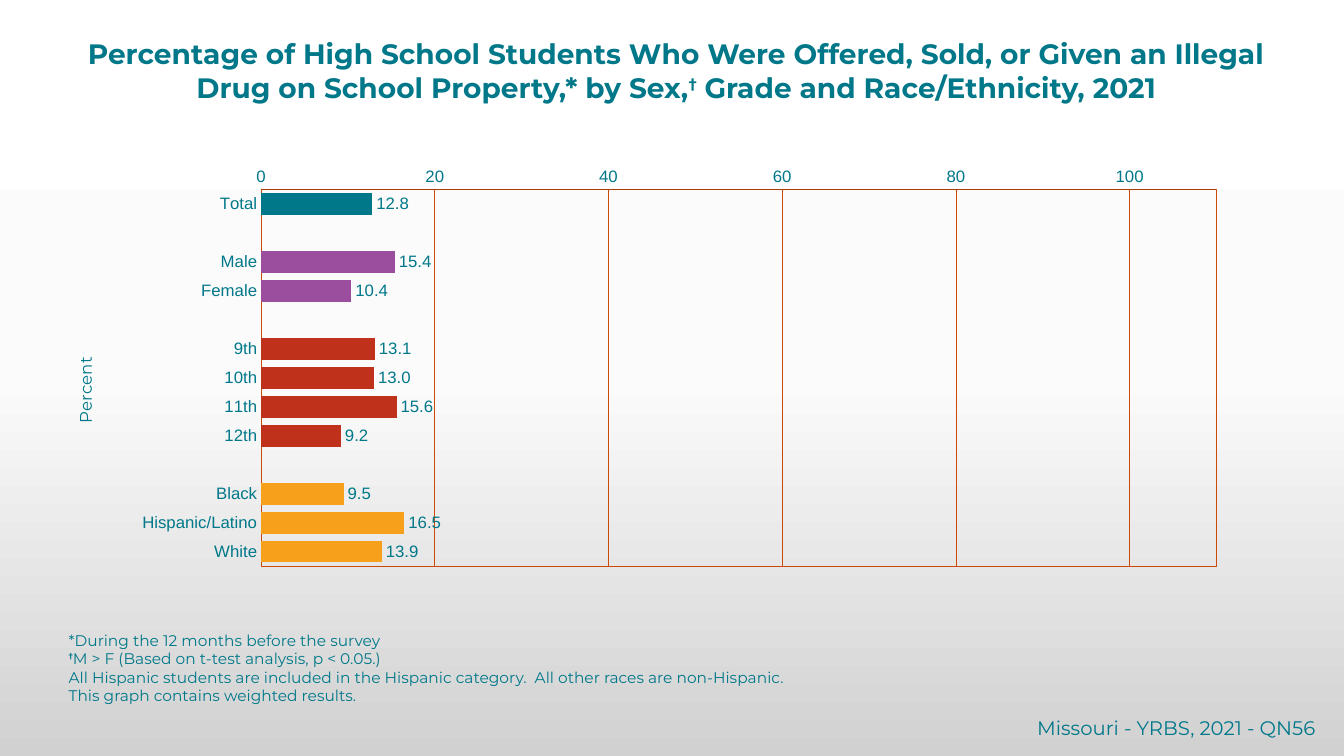
from copy import deepcopy

from lxml import etree
from pptx import Presentation
from pptx.chart.data import CategoryChartData
from pptx.dml.color import RGBColor
from pptx.enum.chart import XL_CHART_TYPE, XL_LABEL_POSITION, XL_TICK_MARK
from pptx.enum.text import MSO_ANCHOR, PP_ALIGN
from pptx.oxml import parse_xml
from pptx.oxml.ns import nsdecls, qn
from pptx.util import Inches, Pt

BAR = XL_CHART_TYPE.BAR_CLUSTERED
OUTSIDE = XL_LABEL_POSITION.OUTSIDE_END
NO_TICK = XL_TICK_MARK.NONE
LEFT, CENTER, RIGHT = PP_ALIGN.LEFT, PP_ALIGN.CENTER, PP_ALIGN.RIGHT
TOP, BOTTOM = MSO_ANCHOR.TOP, MSO_ANCHOR.BOTTOM

WIDTH, HEIGHT = Inches(13.33), Inches(7.5)
COLS, ROWS = 160, 90
HEAD, BODY = "Montserrat", "Arial"
TEAL, PURPLE, RED, AMBER = "007889", "9B4E9E", "BF311B", "F7A01B"
ORANGE, BROWN = "CC4A05", "AA3D04"

GROUPS = [
    (TEAL, [("Total", 12.8)]),
    (PURPLE, [("Male", 15.4), ("Female", 10.4)]),
    (RED, [("9th", 13.1), ("10th", 13), ("11th", 15.6), ("12th", 9.2)]),
    (AMBER, [("Black", 9.5), ("Hispanic/Latino", 16.5), ("White", 13.9)]),
]


def rgb(color):
    return RGBColor.from_string(color)


def grid(col, row, cols, rows):
    return (int(WIDTH * col / COLS), int(HEIGHT * row / ROWS),
            int(WIDTH * cols / COLS), int(HEIGHT * rows / ROWS))


def style_font(font, size, color=TEAL, name=BODY, bold=False):
    font.size, font.name, font.bold = Pt(size), name, bold
    font.color.rgb = rgb(color)


def style_line(line, color, width):
    line.color.rgb = rgb(color)
    line.width = Pt(width)


def add_background(s, stops):
    fill = s.background.fill
    fill.gradient()
    fill.gradient_angle = 270
    stop_list = s.element.find(".//" + qn("a:gsLst"))
    stop_list.insert(1, deepcopy(stop_list[0]))
    for stop, (position, color) in zip(fill.gradient_stops, stops):
        stop.position = position
        stop.color.rgb = rgb(color)


def add_text(s, box, paragraphs, align=LEFT, anchor=TOP, color=TEAL):
    tf = s.shapes.add_textbox(*grid(*box)).text_frame
    tf.word_wrap = True
    tf.vertical_anchor = anchor
    for i, runs in enumerate(paragraphs):
        p = tf.add_paragraph() if i else tf.paragraphs[0]
        p.alignment = align
        for text, size, bold, raised in runs:
            r = p.add_run()
            r.text = text
            style_font(r.font, size, color, HEAD, bold)
            if raised:
                r._r.get_or_add_rPr().set("baseline", str(raised * 1000))


def set_layout(parent, index, inner=False, **shares):
    old = parent.find(qn("c:layout"))
    if old is not None:
        parent.remove(old)
    layout = parse_xml(f"<c:layout {nsdecls('c')}><c:manualLayout/></c:layout>")
    parts = [("layoutTarget", "inner")] if inner else []
    parts += [("xMode", "edge"), ("yMode", "edge"), *shares.items()]
    for tag, value in parts:
        etree.SubElement(layout[0], qn("c:" + tag)).set("val", str(value))
    parent.insert(index, layout)


def style_axis(axis, color):
    axis.major_tick_mark = axis.minor_tick_mark = NO_TICK
    style_font(axis.tick_labels.font, 12)
    style_line(axis.format.line, color, 0.25)


def add_percent_title(axis):
    tf = axis.axis_title.text_frame
    r = tf.paragraphs[0].add_run()
    r.text = "Percent"
    style_font(r.font, 12, name=HEAD)
    body = tf._txBody.bodyPr
    body.set("rot", "-5400000")
    body.set("vert", "horz")
    set_layout(axis.axis_title._element, 1, x=0.01, y=0.39)


def add_bars(s, box):
    bars = []
    for color, members in GROUPS:
        if bars:
            bars.append(("", None, color))
        bars += [(label, value, color) for label, value in members]

    data = CategoryChartData()
    data.categories = [label for label, _, _ in bars]
    data.add_series("Series 1", [value for _, value, _ in bars])
    chart = s.shapes.add_chart(BAR, *grid(*box), data).chart
    chart.has_legend = chart.has_title = False
    style_font(chart.font, 18, "012169", HEAD)

    plot = chart.plots[0]
    plot.gap_width = 34
    plot.vary_by_categories = False
    series = plot.series[0]
    series.invert_if_negative = False
    series.format.fill.solid()
    series.format.fill.fore_color.rgb = rgb(TEAL)
    for i, (_, value, color) in enumerate(bars):
        if value is not None:
            fill = series.points[i].format.fill
            fill.solid()
            fill.fore_color.rgb = rgb(color)

    labels = series.data_labels
    labels.show_value = True
    labels.number_format = "#,##0.0"
    labels.number_format_is_linked = False
    labels.position = OUTSIDE
    style_font(labels.font, 12)

    groups, percent = chart.category_axis, chart.value_axis
    style_axis(groups, ORANGE)
    groups.reverse_order = True
    style_axis(percent, BROWN)
    percent.minimum_scale, percent.maximum_scale = 0, 110
    percent.major_unit = 20
    percent.has_major_gridlines = True
    style_line(percent.major_gridlines.format.line, ORANGE, 0.5)
    add_percent_title(percent)

    area = chart._chartSpace.find(".//" + qn("c:plotArea"))
    set_layout(area, 0, True, x=0.165, y=0.035, w=0.779, h=0.81)
    area.append(parse_xml(
        f'<c:spPr {nsdecls("c", "a")}><a:noFill/><a:ln w="{Pt(0.25)}">'
        f'<a:solidFill><a:srgbClr val="{ORANGE}"/></a:solidFill></a:ln></c:spPr>'))


def main():
    prs = Presentation()
    prs.slide_width, prs.slide_height = WIDTH, HEIGHT
    s = prs.slides.add_slide(prs.slide_layouts[6])
    add_background(s, [(0, "FFFFFF"), (0.5, "FBFBFB"), (1, "D1D1D1")])
    add_bars(s, (7, 20, 146, 56))
    add_text(s, (7, 74.3, 146, 10.2), [
        [("*During the 12 months before the survey", 11, False, 0)],
        [("†", 9, True, 50),
         ("M > F (Based on t-test analysis, p < 0.05.)", 11, False, 0)],
        [("All Hispanic students are included in the Hispanic category.  "
          "All other races are non-Hispanic.", 11, False, 0)],
        [("This graph contains weighted results.", 11, False, 0)],
    ], anchor=BOTTOM)
    add_text(s, (9, 3.75, 143, 9.25), [[
        ("Percentage of High School Students Who Were Offered, Sold, or Given "
         "an Illegal Drug on School Property,* by Sex,", 20, True, 0),
        ("†", 17, True, 40),
        (" Grade and Race/Ethnicity, 2021", 20, True, 0),
    ]], CENTER)
    add_text(s, (45, 84.6, 112.8, 4.1),
             [[("Missouri - YRBS, 2021 - QN56", 14, False, 0)]],
             RIGHT, color="00788A")
    prs.save("out.pptx")


if __name__ == "__main__":
    main()
